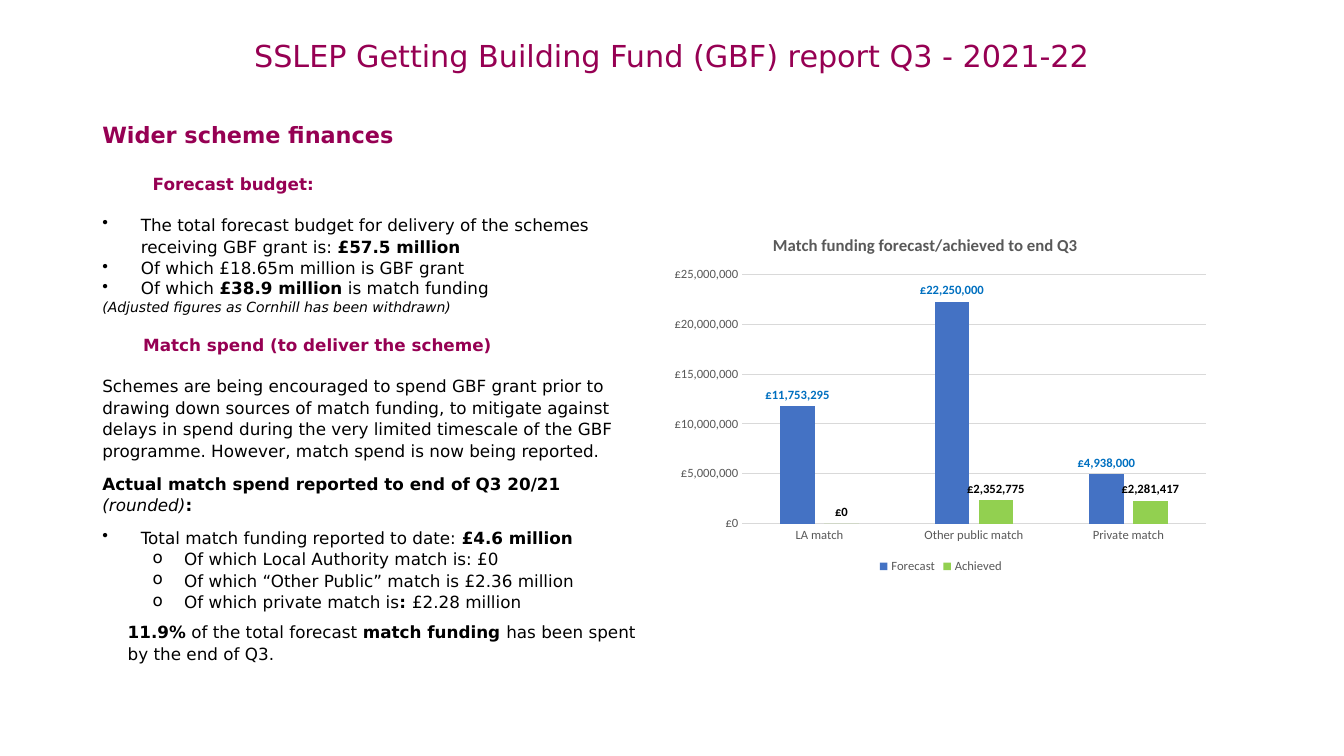
from lxml import etree
from pptx import Presentation
from pptx.chart.data import CategoryChartData
from pptx.dml.color import RGBColor
from pptx.enum.chart import XL_CHART_TYPE, XL_LABEL_POSITION, XL_LEGEND_POSITION, XL_TICK_MARK
from pptx.enum.text import MSO_ANCHOR, PP_ALIGN
from pptx.oxml import parse_xml
from pptx.oxml.ns import nsdecls, qn
from pptx.util import Cm, Pt

COLUMNS = XL_CHART_TYPE.COLUMN_CLUSTERED
LABEL_ABOVE = XL_LABEL_POSITION.OUTSIDE_END
LEGEND_BELOW = XL_LEGEND_POSITION.BOTTOM
NO_TICK = XL_TICK_MARK.NONE
MIDDLE = MSO_ANCHOR.MIDDLE
CENTER = PP_ALIGN.CENTER

TEXT_FONT, CHART_FONT = "DejaVu Sans", "Calibri"
PLUM, BLACK, GREY, RULE = "960053", "000000", "595959", "D9D9D9"
POUNDS = '"£"#,##0'

PLAIN, BOLD, ITALIC = {}, {"bold": True}, {"italic": True}
SMALL_ITALIC = {"italic": True, "size": Pt(10)}
SECTION = {"bold": True, "color": PLUM}
HEADING = {**SECTION, "size": Pt(16)}

BODY = {"line_spacing": 1.07}
SPACED = {**BODY, "space_after": Pt(8)}
BULLET = {**BODY, "bullet": "•", "margin": 0.97, "indent": -0.97}
TIGHT_BULLET = {**BULLET, "line_spacing": 1.0}
SUB_BULLET = {**BODY, "level": 1, "bullet": "o", "margin": 2.06, "indent": -0.79}

FINANCES = [
    ({}, [("Wider scheme finances", HEADING)]),
    ({"indent": 1.27, "space_before": Pt(18.6)}, [("Forecast budget:", SECTION)]),
    ({**BULLET, "space_before": Pt(14)}, [
        ("The total forecast budget for delivery of the schemes receiving GBF grant is: ", PLAIN),
        ("£57.5 million", BOLD)]),
    (BULLET, [("Of which £18.65m million is GBF grant", PLAIN)]),
    (TIGHT_BULLET, [("Of which ", PLAIN), ("£38.9 million", BOLD), (" is match funding", PLAIN)]),
    ({}, [("(Adjusted figures as Cornhill has been withdrawn)", SMALL_ITALIC)]),
    ({"indent": 1.03, "space_before": Pt(14)}, [("Match spend (to deliver the scheme)", SECTION)]),
    ({**SPACED, "space_before": Pt(14)}, [
        ("Schemes are being encouraged to spend GBF grant prior to drawing down sources of match "
         "funding, to mitigate against delays in spend during the very limited timescale of the GBF "
         "programme. However, match spend is now being reported.", PLAIN)]),
    (SPACED, [("Actual match spend reported to end of Q3 20/21 ", BOLD), ("(rounded)", ITALIC), (":", BOLD)]),
    (BULLET, [("Total match funding reported to date: ", PLAIN), ("£4.6 million", BOLD)]),
    (SUB_BULLET, [("Of which Local Authority match is: £0", PLAIN)]),
    (SUB_BULLET, [("Of which “Other Public” match is £2.36 million", PLAIN)]),
    (SUB_BULLET, [("Of which private match is", PLAIN), (": ", BOLD), ("£2.28 million", PLAIN)]),
    ({**BODY, "margin": 0.64, "space_before": Pt(6), "space_after": Pt(6)}, [
        ("11.9%", BOLD), (" of the total forecast ", PLAIN), ("match funding ", BOLD),
        ("has been spent by the end of Q3.", PLAIN)]),
]

CATEGORIES = ["LA match", "Other public match", "Private match"]
SERIES = [
    ("Forecast", [11753295, 22250000, 4938000], "4472C4", "0070C0"),
    ("Achieved", [0, 2352775, 2281417], "92D050", BLACK),
]


def rgb(value):
    return RGBColor.from_string(value)


def apply_format(target, values):
    for key, value in values.items():
        if key == "color":
            target.color.rgb = rgb(value)
        else:
            setattr(target, key, value)


def chart_text(size, color, bold=False):
    return {"name": CHART_FONT, "size": Pt(size), "color": color, "bold": bold}


def add_paragraph(paragraph, layout, runs):
    values = dict(layout)
    properties = paragraph._p.get_or_add_pPr()
    properties.set("marL", str(Cm(values.pop("margin", 0))))
    properties.set("indent", str(Cm(values.pop("indent", 0))))
    bullet = values.pop("bullet", None)
    if bullet:
        etree.SubElement(properties, qn("a:buChar")).set("char", bullet)
    apply_format(paragraph, values)
    for words, style in runs:
        run = paragraph.add_run()
        run.text = words
        apply_format(run.font, {"name": TEXT_FONT, "size": Pt(12), "color": BLACK, **style})


def add_text(slide, box, paragraphs):
    frame = slide.shapes.add_textbox(*box).text_frame
    frame.word_wrap = True
    for number, (layout, runs) in enumerate(paragraphs):
        paragraph = frame.add_paragraph() if number else frame.paragraphs[0]
        add_paragraph(paragraph, layout, runs)
    return frame


def add_title(slide, box):
    runs = [("SSLEP Getting Building Fund (GBF) report Q3 - 2021-22", {"size": Pt(21.6), "color": PLUM})]
    add_text(slide, box, [({"alignment": CENTER, "line_spacing": 0.9}, runs)]).vertical_anchor = MIDDLE


def place_manually(element, inner=False, **fractions):
    for previous in element.findall(qn("c:layout")):
        element.remove(previous)
    target = '<c:layoutTarget val="inner"/>' if inner else ""
    modes = "".join(f'<c:{key}Mode val="edge"/>' for key in "xy")
    sizes = "".join(f'<c:{key} val="{value}"/>' for key, value in fractions.items())
    layout = parse_xml(f'<c:layout {nsdecls("c")}><c:manualLayout>{target}{modes}{sizes}'
                       '</c:manualLayout></c:layout>')
    text = element.find(qn("c:tx"))
    element.insert(0 if text is None else 1, layout)


def style_axes(chart):
    category, value = chart.category_axis, chart.value_axis
    for axis in (category, value):
        axis.major_tick_mark = axis.minor_tick_mark = NO_TICK
        apply_format(axis.tick_labels.font, chart_text(9, GREY))
    apply_format(value, {"minimum_scale": 0, "maximum_scale": 25000000, "major_unit": 5000000,
                         "has_major_gridlines": True})
    apply_format(value.tick_labels, {"number_format": POUNDS, "number_format_is_linked": False})
    value.format.line.fill.background()
    for line in (category.format.line, value.major_gridlines.format.line):
        apply_format(line, {"color": RULE, "width": Pt(0.75)})


def add_match_chart(slide, box):
    data = CategoryChartData(number_format=POUNDS)
    data.categories = CATEGORIES
    for name, amounts, _, _ in SERIES:
        data.add_series(name, amounts)
    chart = slide.shapes.add_chart(COLUMNS, *box, data).chart
    apply_format(chart.font, chart_text(10, BLACK))

    heading = chart.chart_title.text_frame
    heading.text = "Match funding forecast/achieved to end Q3"
    apply_format(heading.paragraphs[0].runs[0].font, chart_text(12, GREY, True))
    place_manually(chart.chart_title._element, x=0.19, y=0.04)

    chart.has_legend = True
    apply_format(chart.legend, {"position": LEGEND_BELOW, "include_in_layout": False})
    apply_format(chart.legend.font, chart_text(9, GREY))

    plot = chart.plots[0]
    apply_format(plot, {"gap_width": 219, "overlap": -27, "vary_by_categories": False})
    for series, (_, _, fill, label_color) in zip(plot.series, SERIES):
        series.format.fill.solid()
        series.format.fill.fore_color.rgb = rgb(fill)
        labels = series.data_labels
        apply_format(labels, {"show_value": True, "number_format": POUNDS,
                              "number_format_is_linked": False, "position": LABEL_ABOVE})
        apply_format(labels.font, chart_text(9, label_color, True))
    style_axes(chart)
    place_manually(chart._chartSpace.chart.plotArea, inner=True, x=0.14, y=0.16, w=0.84, h=0.69)


def main():
    deck = Presentation()
    deck.slide_width, deck.slide_height = Cm(33.87), Cm(19.05)
    slide = deck.slides.add_slide(deck.slide_layouts[6])
    left, middle, width = Cm(2.33), Cm(16.76), Cm(29.21)
    add_title(slide, (left, Cm(1.01), width, Cm(0.89)))
    add_text(slide, (left, Cm(2.92), middle - left, Cm(14.6)), FINANCES)
    add_match_chart(slide, (middle, Cm(5.46), Cm(13.9), Cm(9.1)))
    deck.save("out.pptx")


if __name__ == "__main__":
    main()
